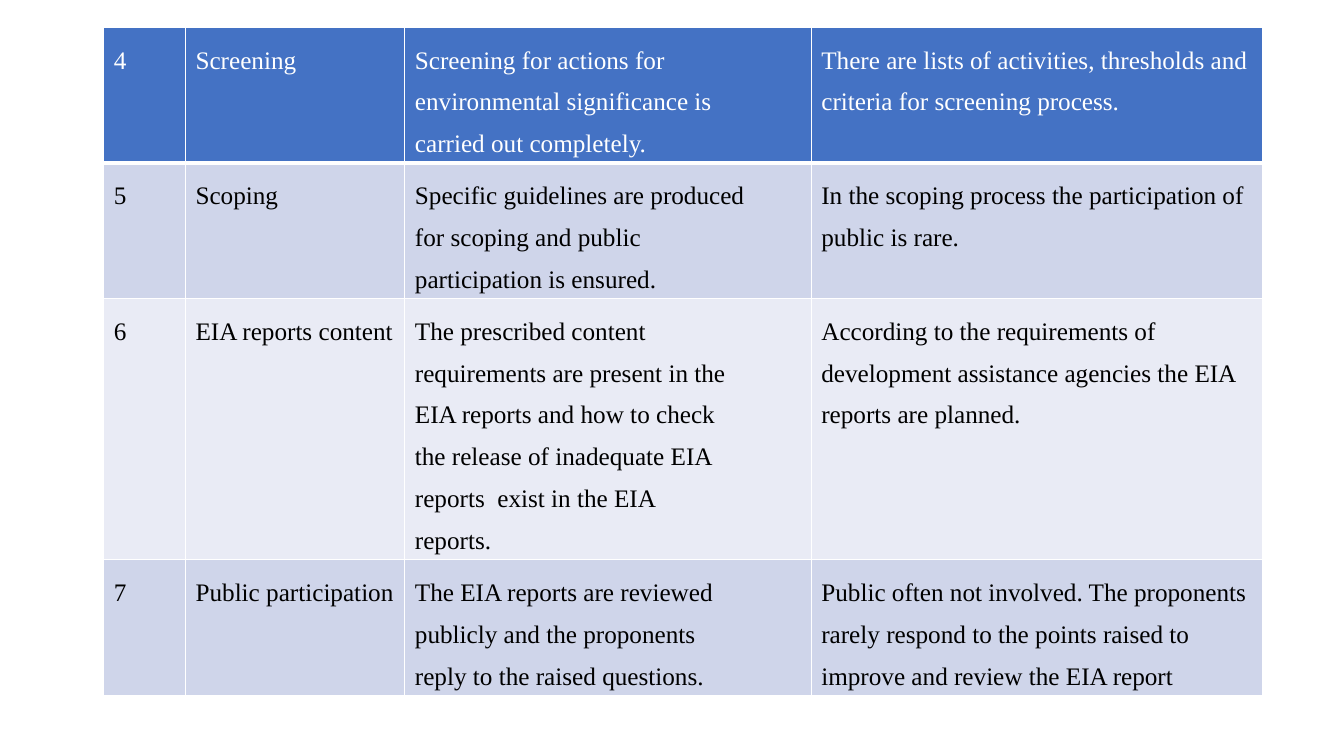
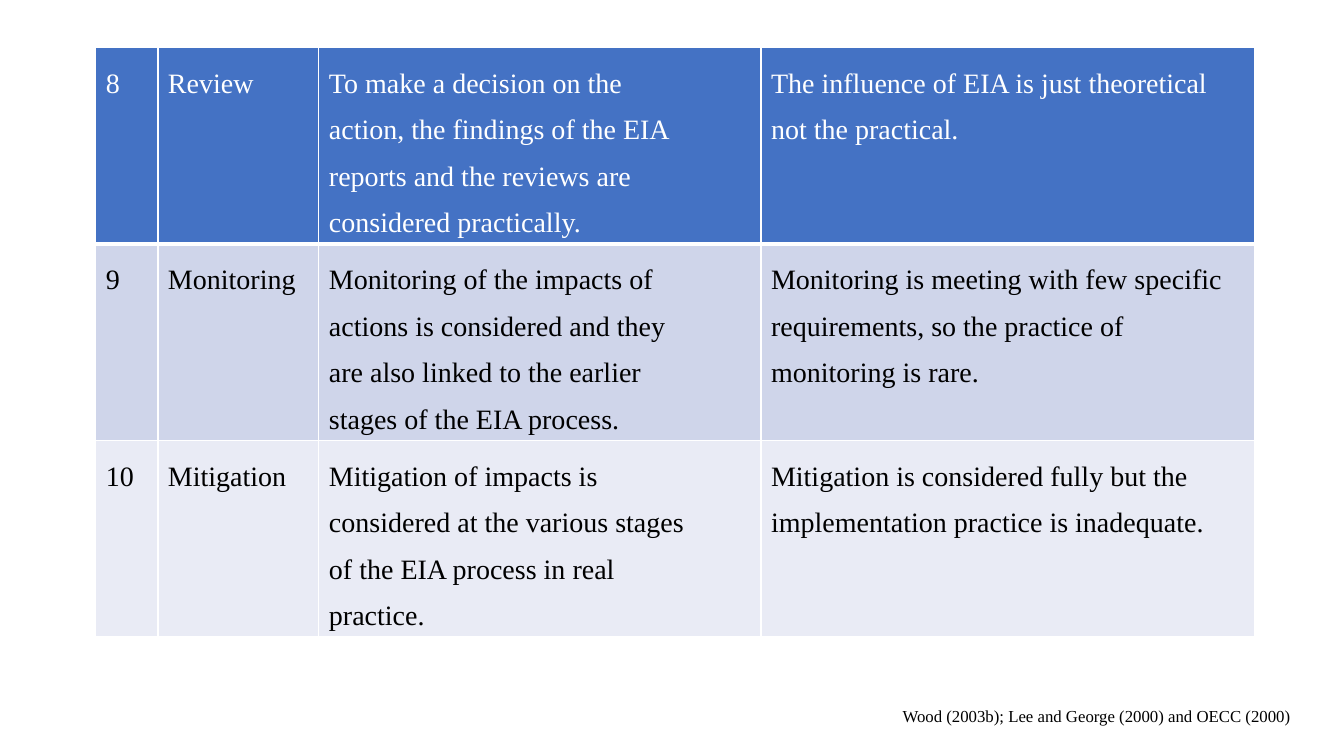
from lxml import etree
from pptx import Presentation
from pptx.dml.color import RGBColor
from pptx.enum import text
from pptx.oxml import ns
from pptx.util import Pt

COLORS = {"header": "4472C4", "band": "CFD5EA", "light": "E9EBF5",
          "white": "FFFFFF", "black": "000000"}
FONT = "Times New Roman"
LINE_SPACING = 1.5
LINE_HEIGHT = 1.65  # spaced line height as a multiple of the font size
CELL_PADDING = 7.2  # top and bottom margins together


def write_text(frame, content, *, size, color="black",
               align=text.PP_ALIGN.LEFT, spacing=None):
    """Fill a text frame, one paragraph for each line of content."""
    for index, line in enumerate(content.split("\n")):
        para = frame.add_paragraph() if index else frame.paragraphs[0]
        para.alignment = align
        para.line_spacing = spacing
        span = para.add_run()
        span.text = line
        span.font.name = FONT
        span.font.size = Pt(size)
        span.font.color.rgb = RGBColor.from_string(COLORS[color])


def set_borders(cell, widths):
    """Draw white cell borders; widths maps L, R, T, B (in that order) to points."""
    properties = cell._tc.get_or_add_tcPr()
    for index, (side, width) in enumerate(widths.items()):
        line = etree.Element(ns.qn(f"a:ln{side}"), w=str(Pt(width)))
        fill = etree.SubElement(line, ns.qn("a:solidFill"))
        etree.SubElement(fill, ns.qn("a:srgbClr"), val=COLORS["white"])
        properties.insert(index, line)


class Deck:
    def __init__(self):
        self.deck = Presentation()
        self.deck.slide_width, self.deck.slide_height = Pt(960), Pt(540)
        self.page = None

    def add_page(self):
        self.page = self.deck.slides.add_slide(self.deck.slide_layouts[6])

    def add_table(self, left, top, widths, rows, *, size, align=text.PP_ALIGN.LEFT):
        """Add a table with a header row and banded body rows."""
        heights = [max(entry.count("\n") + 1 for entry in row) * size * LINE_HEIGHT
                   + CELL_PADDING for row in rows]
        table = self.page.shapes.add_table(
            len(rows), len(widths), Pt(left), Pt(top),
            Pt(sum(widths)), Pt(sum(heights))).table
        table.first_row = table.horz_banding = False
        for column, width in zip(table.columns, widths):
            column.width = Pt(width)
        for number, row in enumerate(rows):
            table.rows[number].height = Pt(heights[number])
            if number == 0:
                fill, color = "header", "white"
            else:
                fill, color = ("band" if number % 2 else "light"), "black"
            borders = {"L": 1, "R": 1, "T": 3 if number == 1 else 1,
                       "B": 3 if number == 0 else 1}
            for cell, entry in zip(table.rows[number].cells, row):
                cell.fill.solid()
                cell.fill.fore_color.rgb = RGBColor.from_string(COLORS[fill])
                set_borders(cell, borders)
                write_text(cell.text_frame, entry, size=size, color=color,
                           align=align, spacing=LINE_SPACING)

    def add_source_note(self, content, left, top, width, height):
        box = self.page.shapes.add_textbox(Pt(left), Pt(top), Pt(width), Pt(height))
        frame = box.text_frame
        frame.word_wrap = True
        frame.vertical_anchor = text.MSO_ANCHOR.MIDDLE
        write_text(frame, content, size=12, align=text.PP_ALIGN.CENTER)


SCREENING_ROWS = [
    ("4", "Screening",
     "Screening for actions for\nenvironmental significance is\ncarried out completely.",
     "There are lists of activities, thresholds and\ncriteria for screening process."),
    ("5", "Scoping",
     "Specific guidelines are produced\nfor scoping and public\nparticipation is ensured.",
     "In the scoping process the participation of\npublic is rare."),
    ("6", "EIA reports content",
     "The prescribed content\nrequirements are present in the\nEIA reports and how to check\n"
     "the release of inadequate EIA\nreports  exist in the EIA\nreports.",
     "According to the requirements of\ndevelopment assistance agencies the EIA\n"
     "reports are planned."),
    ("7", "Public participation",
     "The EIA reports are reviewed\npublicly and the proponents\n"
     "reply to the raised questions.",
     "Public often not involved. The proponents\nrarely respond to the points raised to\n"
     "improve and review the EIA report"),
]

REVIEW_ROWS = [
    ("8", "Review",
     "To make a decision on the\naction, the findings of the EIA\n"
     "reports and the reviews are\nconsidered practically.",
     "The influence of EIA is just theoretical not the practical."),
    ("9", "Monitoring",
     "Monitoring of the impacts of\nactions is considered and they\n"
     "are also linked to the earlier\nstages of the EIA process.",
     "Monitoring is meeting with few specific\nrequirements, so the practice of\n"
     "monitoring is rare."),
    ("10", "Mitigation",
     "Mitigation of impacts is\nconsidered at the various stages\n"
     "of the EIA process in real\npractice.",
     "Mitigation is considered fully but the\nimplementation practice is inadequate."),
]


def main():
    show = Deck()
    show.add_page()
    show.add_table(74.2, 19.7, (58.3, 156.7, 290.3, 322.7), SCREENING_ROWS,
                   size=18, align=text.PP_ALIGN.JUSTIFY)
    show.add_page()
    show.add_table(68.4, 34, (44.4, 115, 315.8, 352.8), REVIEW_ROWS, size=20)
    show.add_source_note("Wood (2003b); Lee and George (2000) and OECC (2000)",
                         621.4, 496.8, 324, 28.8)
    show.deck.save("out.pptx")


if __name__ == "__main__":
    main()
